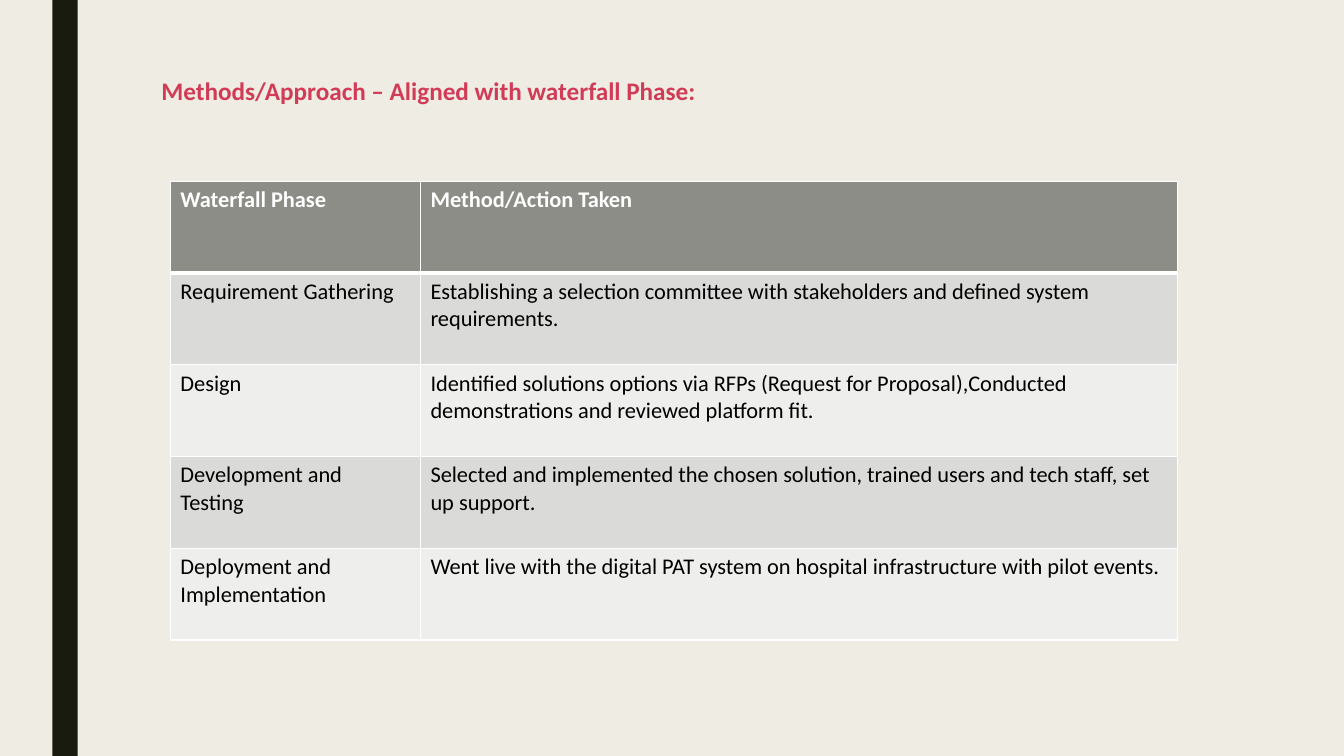
from dataclasses import dataclass

from lxml import etree
from pptx import Presentation
from pptx import util as u
from pptx.dml.color import RGBColor
from pptx.enum import shapes, text
from pptx.oxml import ns

CREAM = RGBColor(0xEF, 0xED, 0xE3)
DARK_OLIVE = RGBColor(0x19, 0x1B, 0x0E)
CRIMSON = RGBColor(0xD1, 0x3B, 0x56)
WHITE = RGBColor(0xFF, 0xFF, 0xFF)
BLACK = RGBColor(0x00, 0x00, 0x00)
HEADER_GRAY = RGBColor(0x8C, 0x8D, 0x86)
BAND_GRAYS = (RGBColor(0xDA, 0xDB, 0xD9), RGBColor(0xEE, 0xEE, 0xED))

COLUMN_WIDTHS = (2.48, 7.51)
ROW_HEIGHT = 0.91


@dataclass(frozen=True)
class PhaseRow:
    phase: str
    action: str


HEADER = PhaseRow("Waterfall Phase", "Method/Action Taken")
PHASES = (
    PhaseRow("Requirement Gathering",
             "Establishing a selection committee with stakeholders and defined system requirements."),
    PhaseRow("Design",
             "Identified solutions options via RFPs (Request for Proposal),Conducted "
             "demonstrations and reviewed platform fit."),
    PhaseRow("Development and Testing",
             "Selected and implemented the chosen solution, trained users and tech staff, set up support."),
    PhaseRow("Deployment and Implementation",
             "Went live with the digital PAT system on hospital infrastructure with pilot events."),
)


def write_text(para, wording: str, size: int, color: RGBColor, bold: bool) -> None:
    span = para.add_run()
    span.text = wording
    formats = {"name": "Calibri", "size": u.Pt(size), "bold": bold}
    for name, value in formats.items():
        setattr(span.font, name, value)
    span.font.color.rgb = color


def add_borders(cell, widths: dict[str, int]) -> None:
    """Draw white cell borders; must run before the cell is filled."""
    properties = cell._tc.get_or_add_tcPr()
    for side, points in widths.items():
        line = etree.SubElement(properties, ns.qn(f"a:ln{side}"), w=str(u.Pt(points)))
        fill = etree.SubElement(line, ns.qn("a:solidFill"))
        etree.SubElement(fill, ns.qn("a:srgbClr"), val=str(WHITE))


def add_side_bar(page) -> None:
    bar = page.shapes.add_shape(shapes.MSO_SHAPE.RECTANGLE, u.Inches(0.52), 0,
                                u.Inches(0.25), u.Inches(7.5))
    bar.shadow.inherit = False
    bar.fill.solid()
    bar.fill.fore_color.rgb = DARK_OLIVE
    bar.line.fill.background()


def add_title(page) -> None:
    title = page.shapes.title
    bounds = {"left": 1.5, "top": 0.75, "width": 10.5, "height": 0.33}
    for name, value in bounds.items():
        setattr(title, name, u.Inches(value))
    box = title.text_frame
    box.word_wrap = True
    box.vertical_anchor = text.MSO_ANCHOR.MIDDLE
    para = box.paragraphs[0]
    para.alignment = text.PP_ALIGN.LEFT
    para.line_spacing = 0.89
    write_text(para, "Methods/Approach – Aligned with waterfall Phase:", 18, CRIMSON, True)


def add_phase_table(page) -> None:
    rows = (HEADER, *PHASES)
    table = page.shapes.add_table(
        len(rows), len(COLUMN_WIDTHS), u.Inches(1.69), u.Inches(1.8),
        u.Inches(sum(COLUMN_WIDTHS)), u.Inches(ROW_HEIGHT * len(rows))).table
    for column, width in zip(table.columns, COLUMN_WIDTHS):
        column.width = u.Inches(width)
    for index, row in enumerate(rows):
        is_header = index == 0
        shade = HEADER_GRAY if is_header else BAND_GRAYS[(index - 1) % 2]
        borders = {"L": 1, "R": 1, "T": 3 if index == 1 else 1, "B": 3 if is_header else 1}
        for cell, wording in zip(table.rows[index].cells, (row.phase, row.action)):
            add_borders(cell, borders)
            cell.fill.solid()
            cell.fill.fore_color.rgb = shade
            write_text(cell.text_frame.paragraphs[0], wording, 16,
                       WHITE if is_header else BLACK, is_header)


def main() -> None:
    deck = Presentation()
    deck.slide_width, deck.slide_height = u.Inches(13.33), u.Inches(7.5)
    page = deck.slides.add_slide(deck.slide_layouts.get_by_name("Title Only"))
    page.background.fill.solid()
    page.background.fill.fore_color.rgb = CREAM
    add_side_bar(page)
    add_title(page)
    add_phase_table(page)
    deck.save("out.pptx")


if __name__ == "__main__":
    main()
